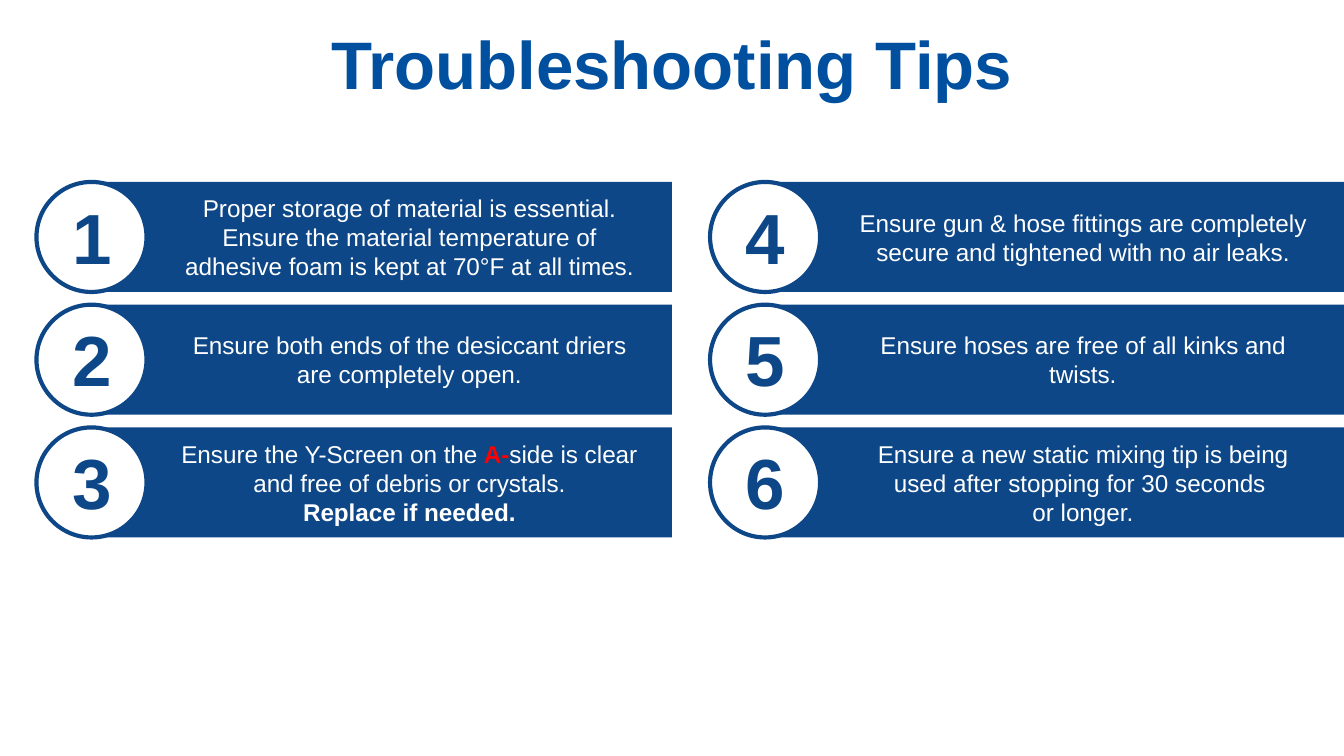
from dataclasses import dataclass

from pptx import Presentation
from pptx.dml.color import RGBColor
from pptx.enum.shapes import MSO_SHAPE as Preset
from pptx.enum.text import MSO_ANCHOR as Anchor, MSO_AUTO_SIZE as AutoSize, PP_ALIGN as Align
from pptx.shapes.autoshape import Shape
from pptx.shapes.group import GroupShape
from pptx.slide import Slide
from pptx.text.text import TextFrame
from pptx.util import Cm, Pt

NAVY = "0D4787"
TITLE_BLUE = "00509F"
WHITE = "FFFFFF"
RED = "FF0000"
FONT = "Arial"

ROWS = 3
FIRST_LEFT, FIRST_TOP = 0.69, 3.44
COLUMN_PITCH, ROW_PITCH = 12.73, 2.32
CIRCLE_SIZE = 2.08
BAR_OFFSET, BAR_WIDTH = 0.94, 11.07


@dataclass(frozen=True)
class Segment:
    text: str
    color: str = WHITE
    bold: bool = False


@dataclass(frozen=True)
class Tip:
    paragraphs: tuple[tuple[Segment, ...], ...]


def plain(text: str) -> Tip:
    return Tip(((Segment(text),),))


TIPS = (
    plain("Proper storage of material is essential. Ensure the material temperature of "
          "adhesive foam is kept at 70°F at all times."),
    plain("Ensure both ends of the desiccant driers are completely open."),
    Tip((
        (Segment("Ensure the Y-Screen on the "), Segment("A-", RED, True),
         Segment("side is clear and free of debris or crystals.")),
        (Segment("Replace if needed.", bold=True),),
    )),
    plain("Ensure gun & hose fittings are completely secure and tightened with no air leaks."),
    plain("Ensure hoses are free of all kinks and twists."),
    plain("Ensure a new static mixing tip is being used after stopping for 30 seconds \vor longer."),
)


def rgb(color: str) -> RGBColor:
    return RGBColor.from_string(color)


def format_font(font, size: float, color: str, bold: bool) -> None:
    font.name = FONT
    font.size = Pt(size)
    font.bold = bold
    font.color.rgb = rgb(color)


def write_line(frame: TextFrame, text: str, size: float, color: str) -> None:
    paragraph = frame.paragraphs[0]
    paragraph.text = text
    paragraph.alignment = Align.CENTER
    format_font(paragraph.font, size, color, True)


def write_tip(frame: TextFrame, tip: Tip) -> None:
    for index, segments in enumerate(tip.paragraphs):
        paragraph = frame.add_paragraph() if index else frame.paragraphs[0]
        paragraph.alignment = Align.CENTER
        if len(segments) == 1:
            paragraph.text = segments[0].text
            format_font(paragraph.font, 13, segments[0].color, segments[0].bold)
            continue
        for segment in segments:
            run = paragraph.add_run()
            run.text = segment.text
            format_font(run.font, 13, segment.color, segment.bold)


def add_filled(group: GroupShape, preset: Preset, left: float, top: float,
               width: float, color: str) -> Shape:
    shape = group.shapes.add_shape(preset, Cm(left), Cm(top), Cm(width), Cm(CIRCLE_SIZE))
    shape.shadow.inherit = False
    shape.fill.solid()
    shape.fill.fore_color.rgb = rgb(color)
    shape.line.fill.background()
    return shape


def add_tip(slide: Slide, index: int, tip: Tip) -> None:
    column, row = divmod(index, ROWS)
    left = FIRST_LEFT + column * COLUMN_PITCH
    top = FIRST_TOP + row * ROW_PITCH
    group = slide.shapes.add_group_shape()

    bar = add_filled(group, Preset.RECTANGLE, left + BAR_OFFSET, top, BAR_WIDTH, NAVY)
    frame = bar.text_frame
    frame.word_wrap = True
    frame.vertical_anchor = Anchor.MIDDLE
    frame.margin_left, frame.margin_right = Cm(1.78), Cm(0.64)
    frame.margin_top = frame.margin_bottom = Cm(0.13)
    write_tip(frame, tip)

    circle = add_filled(group, Preset.OVAL, left, top, CIRCLE_SIZE, WHITE)
    circle.line.color.rgb = rgb(NAVY)
    circle.line.width = Pt(2.25)

    number = group.shapes.add_textbox(Cm(left + 0.02), Cm(top + 0.09), Cm(2.06), Cm(1.88))
    number.text_frame.word_wrap = True
    number.text_frame.auto_size = AutoSize.SHAPE_TO_FIT_TEXT
    write_line(number.text_frame, str(index + 1), 38, NAVY)


def add_title(slide: Slide, text: str) -> None:
    title = slide.shapes.title
    title.left, title.top, title.width, title.height = Cm(0), Cm(-0.02), Cm(25.4), Cm(2.39)
    title.text_frame.vertical_anchor = Anchor.MIDDLE
    write_line(title.text_frame, text, 36, TITLE_BLUE)


def main() -> None:
    presentation = Presentation()
    presentation.slide_width, presentation.slide_height = Cm(25.4), Cm(14.29)
    slide = presentation.slides.add_slide(presentation.slide_layouts[5])
    add_title(slide, "Troubleshooting Tips")
    for index, tip in enumerate(TIPS):
        add_tip(slide, index, tip)
    presentation.save("out.pptx")


if __name__ == "__main__":
    main()
